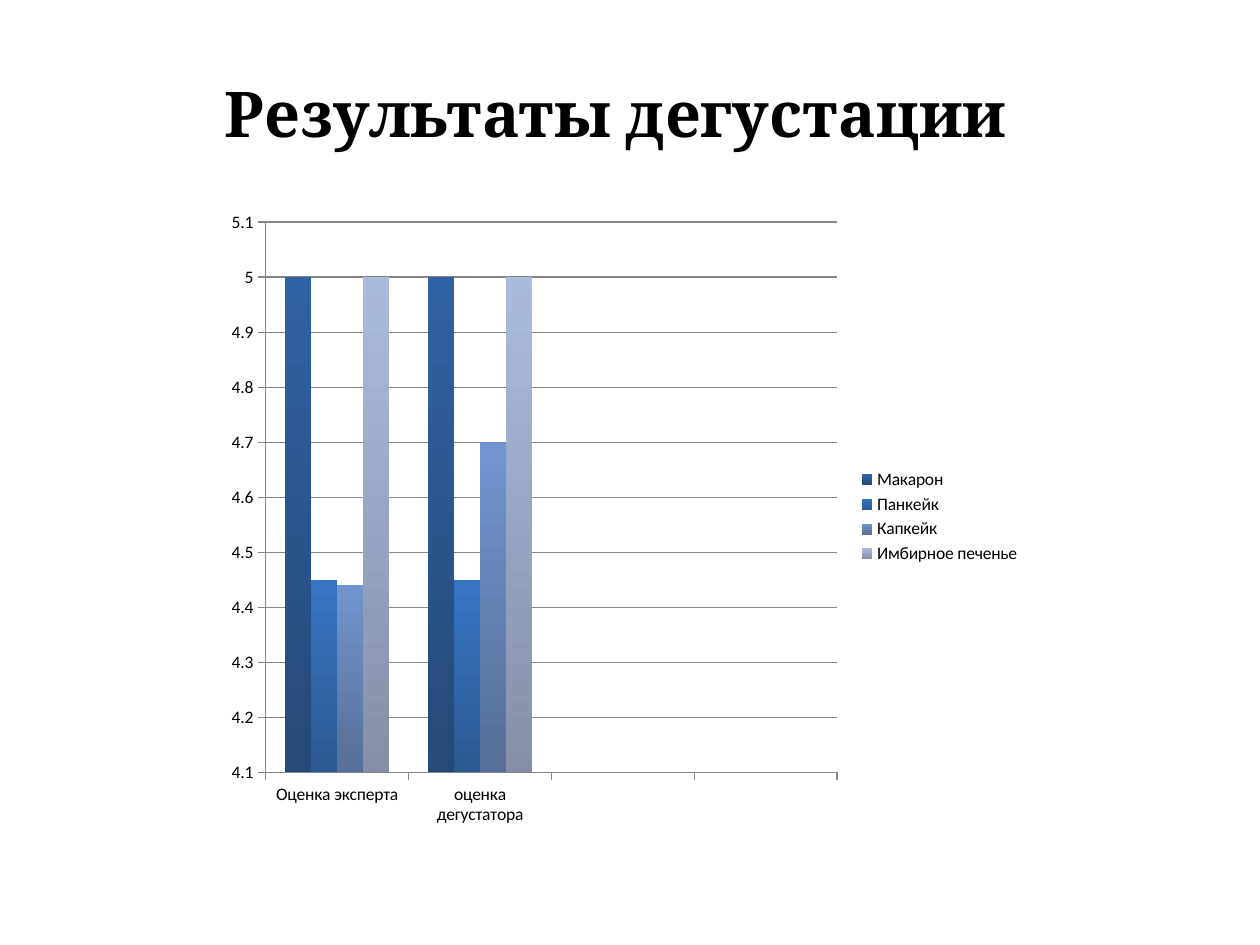
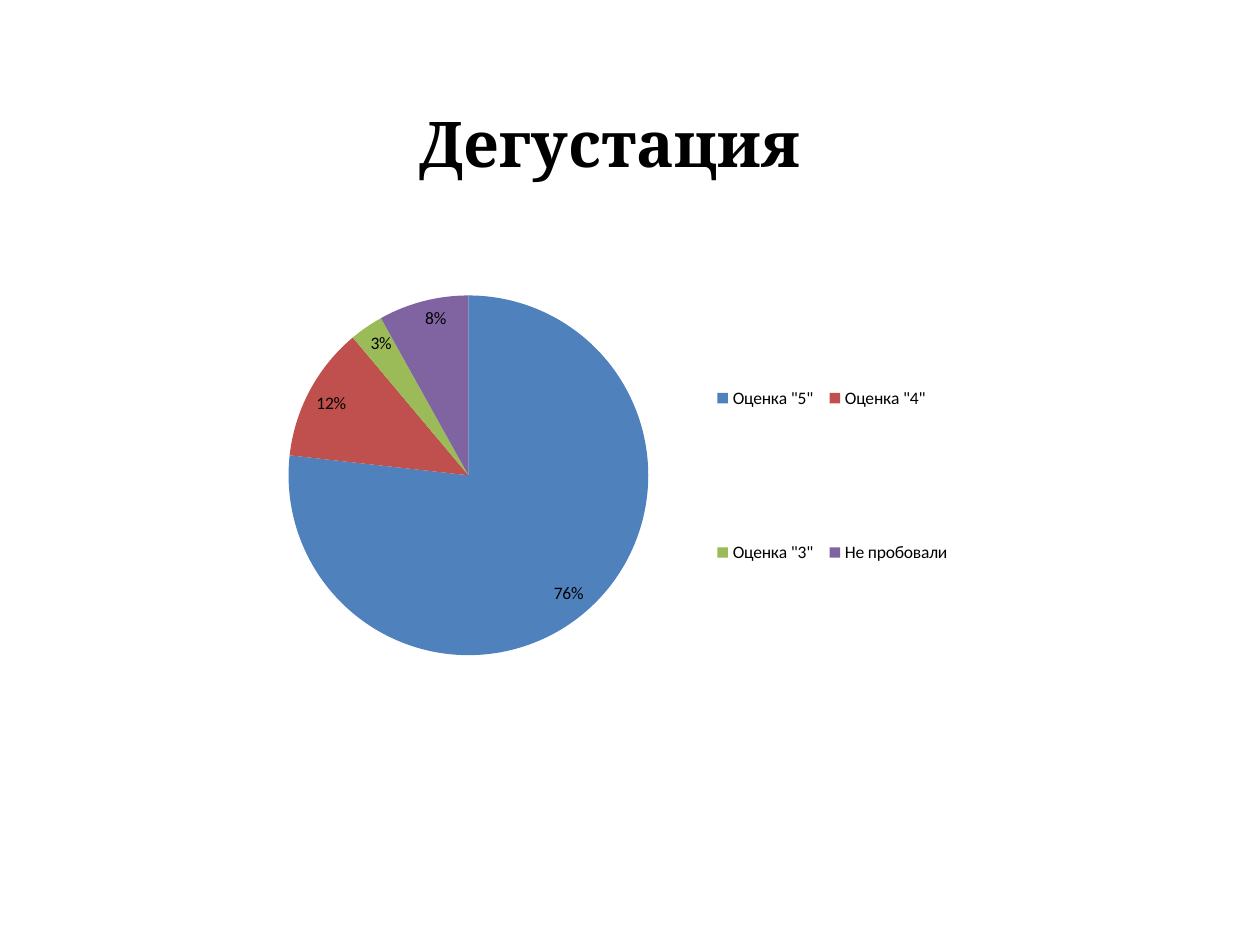
import pptx
import pptx.chart.data
import pptx.dml.color
import pptx.enum.chart
import pptx.enum.text
import pptx.oxml
import pptx.oxml.ns
import pptx.util

COLUMNS, ROWS = 100, 75
COLORS = {
    "text": "000000",
    "axis": "868686",
    "five": "4F81BD",
    "four": "C0504D",
    "three": "9BBB59",
    "untried": "8064A2",
}
# Top and bottom colour of each product's bars
BAR_GRADIENTS = {
    "Макарон": ("2F62A4", "254A77"),
    "Панкейк": ("3674C2", "2B5A92"),
    "Капкейк": ("7095D0", "576F98"),
    "Имбирное печенье": ("ABBBDD", "868FA7"),
}
SCORES = {
    "Макарон": (5, 5, None, None),
    "Панкейк": (4.45, 4.45, None, None),
    "Капкейк": (4.44, 4.7, None, None),
    "Имбирное печенье": (5, 5, None, None),
}
# Share in percent and colour name of each mark
MARKS = {
    'Оценка "5"': (76, "five"),
    'Оценка "4"': (12, "four"),
    'Оценка "3"': (3, "three"),
    "Не пробовали": (8, "untried"),
}


def rgb(color):
    return pptx.dml.color.RGBColor.from_string(color)


def format_font(font, *, name, size, bold=False, color=COLORS["text"]):
    font.name = name
    font.size = pptx.util.Pt(size)
    font.bold = bold
    font.color.rgb = rgb(color)


def write_text(paragraph, text, **font_format):
    run = paragraph.add_run()
    run.text = text
    paragraph.alignment = pptx.enum.text.PP_ALIGN.CENTER
    format_font(run.font, **font_format)


def set_layout(parent, index, shares, inner=False):
    """Fix a chart part at x, y, width and height, as shares of the chart."""
    for layout in parent.findall(pptx.oxml.ns.qn("c:layout")):
        parent.remove(layout)
    target = '<c:layoutTarget val="inner"/>' if inner else ""
    modes = "".join(f'<c:{axis}Mode val="edge"/>' for axis in "xy")
    sizes = "".join(f'<c:{key} val="{share}"/>' for key, share in zip("xywh", shares))
    parent.insert(index, pptx.oxml.parse_xml(
        f'<c:layout {pptx.oxml.ns.nsdecls("c")}><c:manualLayout>'
        f"{target}{modes}{sizes}</c:manualLayout></c:layout>"))


class Deck:
    """Holds the shared style and the current slide."""

    title_format = dict(name="Cambria", size=36, bold=True)
    chart_format = dict(name="Calibri", size=10)

    def __init__(self):
        self.presentation = pptx.Presentation()
        self.presentation.slide_width = pptx.util.Inches(10)
        self.presentation.slide_height = pptx.util.Inches(7.5)
        self.slide = None

    def box(self, column, row, columns, rows):
        """Turn grid units into left, top, width and height."""
        cell_width = self.presentation.slide_width / COLUMNS
        cell_height = self.presentation.slide_height / ROWS
        return [round(length) for length in (
            column * cell_width, row * cell_height,
            columns * cell_width, rows * cell_height)]

    def start_slide(self):
        self.slide = self.presentation.slides.add_slide(
            self.presentation.slide_layouts[6])

    def title(self, text, *place):
        frame = self.slide.shapes.add_textbox(*self.box(*place)).text_frame
        frame.word_wrap = True
        frame.auto_size = pptx.enum.text.MSO_AUTO_SIZE.SHAPE_TO_FIT_TEXT
        write_text(frame.paragraphs[0], text, **self.title_format)

    def chart(self, kind, categories, series, place, plot_shares, legend_position):
        data = pptx.chart.data.CategoryChartData()
        data.categories = categories
        for name, values in series.items():
            data.add_series(name, values)
        chart = self.slide.shapes.add_chart(kind, *self.box(*place), data).chart
        format_font(chart.font, **self.chart_format)
        chart.has_title = False
        chart.has_legend = True
        chart.legend.position = legend_position
        chart.legend.include_in_layout = False
        plot_area = chart._chartSpace.chart.plotArea
        set_layout(plot_area, 0, plot_shares, inner=True)
        return chart

    def column_chart(self, categories, series, place, plot_shares):
        chart = self.chart(
            pptx.enum.chart.XL_CHART_TYPE.COLUMN_CLUSTERED, categories, series,
            place, plot_shares, pptx.enum.chart.XL_LEGEND_POSITION.RIGHT)
        plot = chart.plots[0]
        plot.gap_width = 150
        plot.vary_by_categories = False
        for bars in plot.series:
            fill = bars.format.fill
            fill.gradient()
            fill.gradient_angle = 270
            for stop, color in zip(fill.gradient_stops, BAR_GRADIENTS[bars.name]):
                stop.color.rgb = rgb(color)
        scale = chart.value_axis
        scale.minimum_scale, scale.maximum_scale = 4.1, 5.1
        scale.major_unit = 0.1
        scale.has_major_gridlines = True
        for line in (scale.format.line, scale.major_gridlines.format.line,
                     chart.category_axis.format.line):
            line.color.rgb = rgb(COLORS["axis"])
            line.width = pptx.util.Pt(0.75)

    def pie_chart(self, marks, place, plot_shares, legend_shares):
        values = [value for value, _ in marks.values()]
        chart = self.chart(
            pptx.enum.chart.XL_CHART_TYPE.PIE, list(marks), {"Series 1": values},
            place, plot_shares, pptx.enum.chart.XL_LEGEND_POSITION.TOP)
        set_layout(chart.legend._element, 1, legend_shares)
        plot = chart.plots[0]
        plot.vary_by_categories = True
        for index, (_, color) in enumerate(marks.values()):
            fill = plot.series[0].points[index].format.fill
            fill.solid()
            fill.fore_color.rgb = rgb(COLORS[color])
        plot.has_data_labels = True
        labels = plot.data_labels
        labels.show_value = True
        labels.number_format = '0"%"'
        labels.number_format_is_linked = False
        labels.position = pptx.enum.chart.XL_LABEL_POSITION.INSIDE_END
        format_font(labels.font, **self.chart_format)


def main():
    deck = Deck()

    deck.start_slide()
    deck.column_chart(
        ["Оценка эксперта", "оценка дегустатора", "", ""], SCORES,
        place=(17.2, 15.6, 64.8, 50.8), plot_shares=(0.06, 0.04, 0.7, 0.86))
    deck.title("Результаты дегустации", 10.2, 5.4, 77.3, 7.1)

    deck.start_slide()
    deck.pie_chart(
        MARKS, place=(15.6, 11.7, 66.4, 46.9),
        plot_shares=(0.11, 0.19, 0.43, 0.73), legend_shares=(0.61, 0.18, 0.3, 0.75))
    deck.title("Дегустация", 10.9, 7.8, 75, 7.1)

    deck.presentation.save("out.pptx")


if __name__ == "__main__":
    main()
